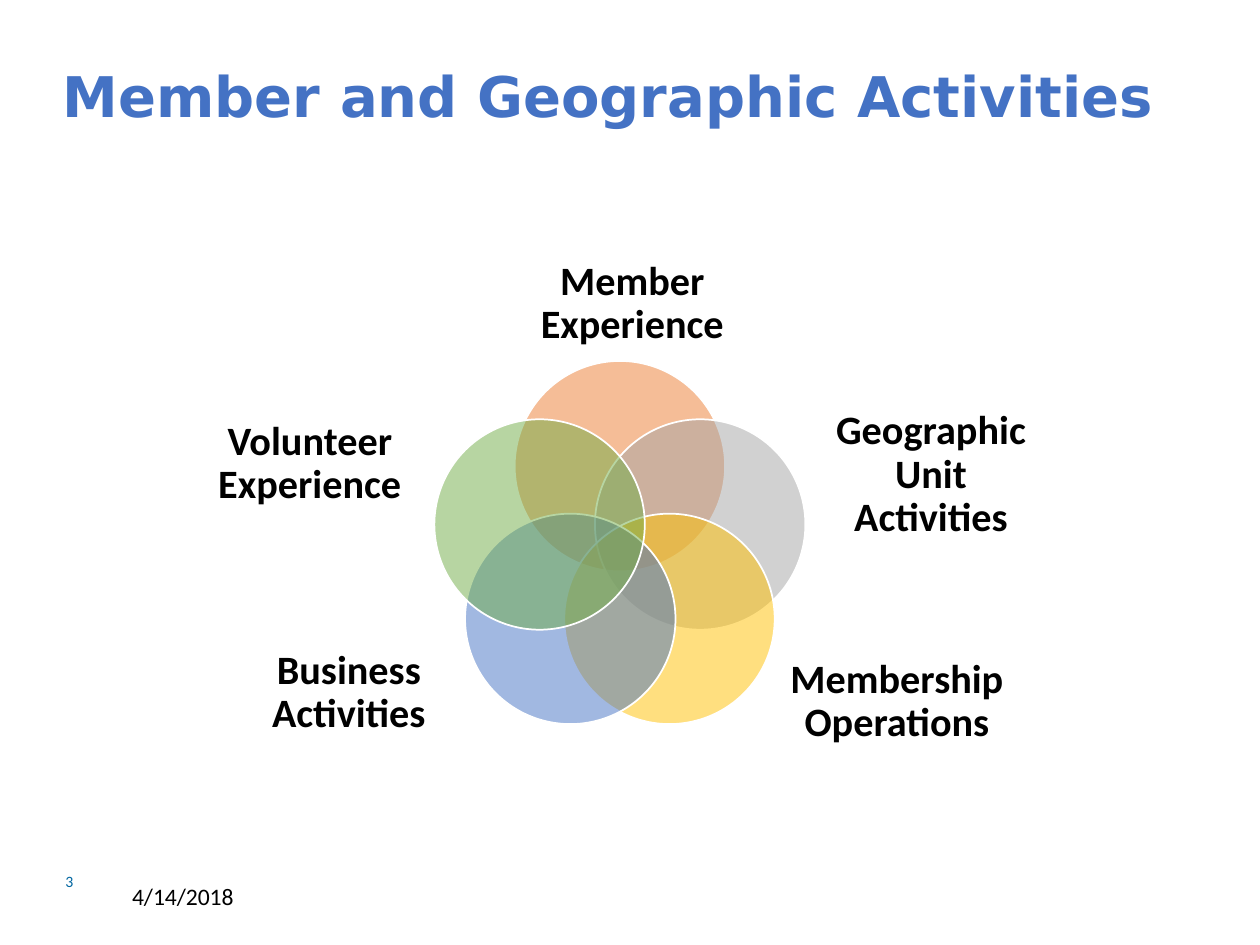
from dataclasses import dataclass
from math import cos, radians, sin

from pptx import Presentation
from pptx.dml.color import RGBColor
from pptx.enum.shapes import MSO_SHAPE as Preset
from pptx.enum.text import MSO_ANCHOR as Anchor, PP_ALIGN as Align
from pptx.oxml.ns import qn
from pptx.shapes.shapetree import GroupShapes
from pptx.util import Inches, Pt
from lxml.etree import SubElement

BLACK = RGBColor(0x00, 0x00, 0x00)
WHITE = RGBColor(0xFF, 0xFF, 0xFF)
BLUE = RGBColor(0x44, 0x72, 0xC4)
DEEP_BLUE = RGBColor(0x00, 0x66, 0xA1)
ORANGE = RGBColor(0xED, 0x7D, 0x31)
GRAY = RGBColor(0xA5, 0xA5, 0xA5)
GOLD = RGBColor(0xFF, 0xC0, 0x00)
GREEN = RGBColor(0x70, 0xAD, 0x47)

CENTER_X, CENTER_Y = 4.92, 4.37
RING_RADIUS = 0.67
DIAMETER = 1.67

TITLE_FONT = {"name": "DejaVu Sans", "size": Pt(32), "bold": True}
LABEL_FONT = {"name": "Calibri", "size": Pt(23), "bold": True}
DATE_FONT = {"name": "Calibri", "size": Pt(13.5)}
NUMBER_FONT = {"name": "Calibri", "size": Pt(9)}
TIGHT = {"line_spacing": 0.9}
CENTERED = {"line_spacing": 0.9, "alignment": Align.CENTER}
MIDDLE = {"vertical_anchor": Anchor.MIDDLE}
NO_MARGINS = {
    "margin_left": 0, "margin_top": 0, "margin_right": 0, "margin_bottom": 0,
}


@dataclass(frozen=True)
class Box:
    left: float
    top: float
    width: float
    height: float


@dataclass(frozen=True)
class Activity:
    name: str
    color: RGBColor
    label: Box


ACTIVITIES = [
    Activity("Member Experience", ORANGE, Box(4.05, 1.85, 1.94, 1.12)),
    Activity("Geographic Unit Activities", GRAY, Box(6.52, 3.16, 1.74, 1.22)),
    Activity("Membership Operations", GOLD, Box(6.25, 4.96, 1.74, 1.22)),
    Activity("Business Activities", BLUE, Box(1.9, 4.89, 1.74, 1.22)),
    Activity("Volunteer Experience", GREEN, Box(1.59, 3.07, 1.74, 1.22)),
]


def apply(target: object, values: dict) -> None:
    for name, value in values.items():
        setattr(target, name, value)


def add_text(shapes: GroupShapes, text: str, box: Box, color: RGBColor,
             font: dict, paragraph_format: dict, frame_format: dict) -> None:
    frame = shapes.add_textbox(Inches(box.left), Inches(box.top),
                               Inches(box.width), Inches(box.height)).text_frame
    apply(frame, {"word_wrap": True, **frame_format})
    paragraph = frame.paragraphs[0]
    apply(paragraph, paragraph_format)
    run = paragraph.add_run()
    run.text = text
    apply(run.font, font)
    run.font.color.rgb = color


def add_circle(shapes: GroupShapes, angle: float, color: RGBColor) -> None:
    left = CENTER_X + RING_RADIUS * sin(angle) - DIAMETER / 2
    top = CENTER_Y - RING_RADIUS * cos(angle) - DIAMETER / 2
    circle = shapes.add_shape(Preset.OVAL, Inches(left), Inches(top),
                              Inches(DIAMETER), Inches(DIAMETER))
    circle.shadow.inherit = False
    circle.fill.solid()
    circle.fill.fore_color.rgb = color
    tint = circle.fill._xPr.find(qn("a:solidFill")).find(qn("a:srgbClr"))
    SubElement(tint, qn("a:alpha"), val="50000")
    circle.line.color.rgb = WHITE
    circle.line.width = Pt(1)


def main() -> None:
    deck = Presentation()
    deck.slide_width, deck.slide_height = Inches(10), Inches(7.5)
    slide = deck.slides.add_slide(deck.slide_layouts[6])

    add_text(slide.shapes, "Member and Geographic Activities",
             Box(0.4, 0.22, 9.17, 1.13), BLUE, TITLE_FONT, TIGHT, MIDDLE)
    add_text(slide.shapes, "4/14/2018", Box(0.95, 6.95, 1.8, 0.4),
             BLACK, DATE_FONT, {}, {})
    add_text(slide.shapes, "3", Box(0.42, 6.79, 0.53, 0.4),
             DEEP_BLUE, NUMBER_FONT, {}, MIDDLE)

    venn = slide.shapes.add_group_shape().shapes
    step = radians(360 / len(ACTIVITIES))
    for index, activity in enumerate(ACTIVITIES):
        add_circle(venn, index * step, activity.color)
        add_text(venn, activity.name, activity.label, BLACK,
                 LABEL_FONT, CENTERED, {**MIDDLE, **NO_MARGINS})

    deck.save("out.pptx")


if __name__ == "__main__":
    main()
